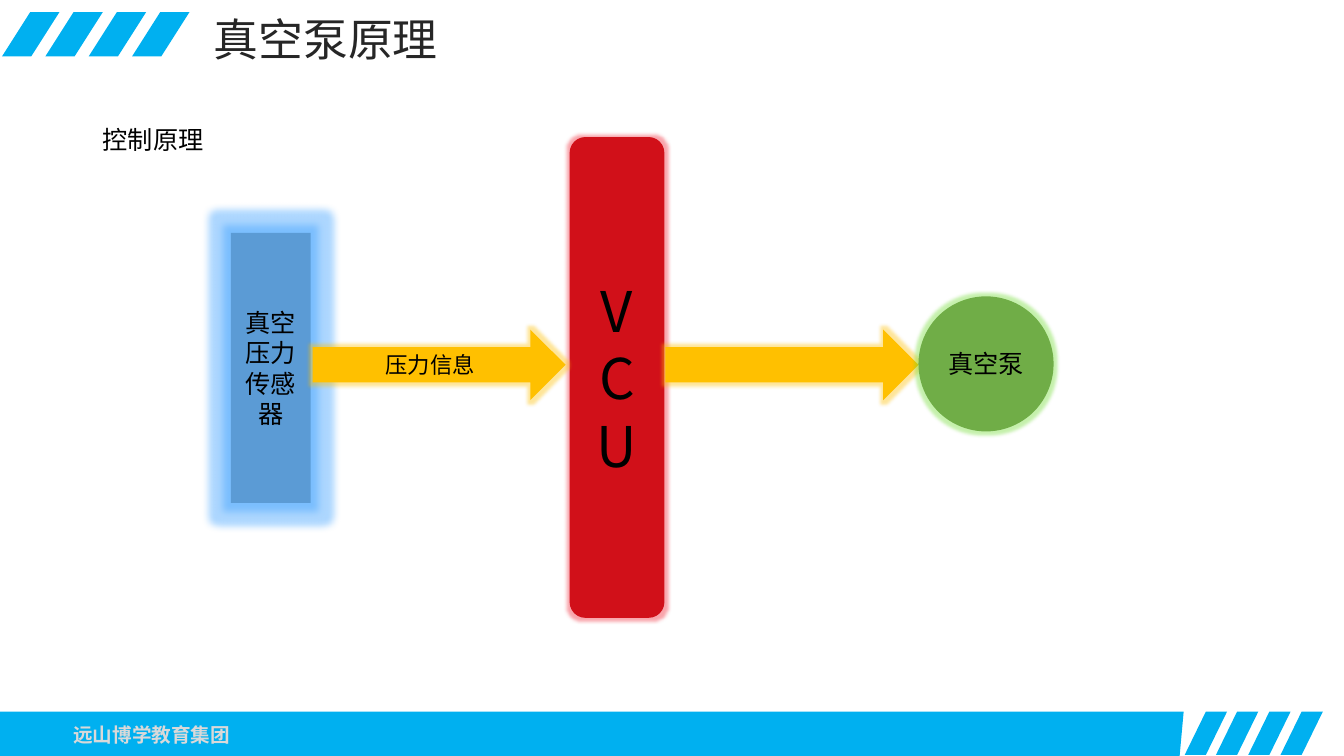
from dataclasses import dataclass

from lxml.etree import SubElement
from pptx import Presentation
from pptx.dml.color import RGBColor
from pptx.enum.shapes import MSO_SHAPE
from pptx.enum.text import MSO_ANCHOR, PP_ALIGN
from pptx.oxml.ns import qn
from pptx.shapes.autoshape import Shape
from pptx.slide import Slide
from pptx.text.text import TextFrame
from pptx.util import Pt

PX = 9144
FONT = "Noto Sans CJK SC"
SKY = RGBColor(0x00, 0xB0, 0xF0)
RED = RGBColor(0xD1, 0x10, 0x19)
BLUE = RGBColor(0x5B, 0x9B, 0xD5)
AMBER = RGBColor(0xFF, 0xC0, 0x00)
GREEN = RGBColor(0x70, 0xAD, 0x47)
BLACK = RGBColor(0x00, 0x00, 0x00)
CHARCOAL = RGBColor(0x26, 0x26, 0x26)
SILVER = RGBColor(0xD9, 0xD9, 0xD9)
RED_GLOW = RGBColor(0xF0, 0x20, 0x30)
BLUE_GLOW = RGBColor(0x31, 0x9B, 0xFF)
GREEN_GLOW = RGBColor(0x6F, 0xDC, 0x30)


@dataclass(frozen=True)
class Stripes:
    left: int
    top: int
    width: int
    height: int
    lean: int
    span: int


@dataclass(frozen=True)
class Label:
    text: str
    left: int
    top: int
    width: int
    height: int
    size: int
    color: RGBColor
    bold: bool = False
    align: PP_ALIGN = PP_ALIGN.LEFT
    anchor: MSO_ANCHOR = MSO_ANCHOR.TOP


@dataclass(frozen=True)
class Block:
    kind: MSO_SHAPE
    left: int
    top: int
    width: int
    height: int
    fill: RGBColor
    glow: RGBColor
    radius: int = 5
    text: str = ""
    size: int = 18
    wrap: bool = True


STRIPE_COUNT = 4
STRIPES = [
    Stripes(1175, 706, 21, 43, 21, 95),
    Stripes(2, 12, 29, 44, 28, 129),
]
FOOTER_BAR = [(0, 706), (1174, 706), (1170, 750), (0, 750)]
LABELS = [
    Label("远山博学教育集团", 56, 711, 189, 36, 14, SILVER, True,
          PP_ALIGN.CENTER, MSO_ANCHOR.MIDDLE),
    Label("真空泵原理", 202, 7, 632, 64, 32, CHARCOAL),
    Label("控制原理", 92, 118, 444, 40, 18, BLACK),
]
BLOCKS = [
    Block(MSO_SHAPE.ROUNDED_RECTANGLE, 565, 136, 94, 477, RED, RED_GLOW,
          text="V\nCU", size=40),
    Block(MSO_SHAPE.RECTANGLE, 229, 231, 79, 268, BLUE, BLUE_GLOW,
          radius=11, text="真空压力传感器"),
    Block(MSO_SHAPE.RIGHT_ARROW, 310, 327, 251, 70, AMBER, AMBER,
          text="压力信息", size=16),
    Block(MSO_SHAPE.RIGHT_ARROW, 660, 327, 251, 70, AMBER, AMBER),
    Block(MSO_SHAPE.OVAL, 911, 294, 134, 134, GREEN, GREEN_GLOW,
          text="真空泵", wrap=False),
]


def paint(shape: Shape, color: RGBColor) -> None:
    shape.shadow.inherit = False
    shape.fill.solid()
    shape.fill.fore_color.rgb = color
    shape.line.fill.background()


def add_glow(shape: Shape, color: RGBColor, radius: int) -> None:
    effects = shape._element.spPr.find(qn("a:effectLst"))
    glow = SubElement(effects, qn("a:glow"), rad=str(Pt(radius)))
    tint = SubElement(glow, qn("a:srgbClr"), val=str(color))
    SubElement(tint, qn("a:alpha"), val="40000")


def write(frame: TextFrame, text: str, size: int, color: RGBColor,
          align: PP_ALIGN, bold: bool = False) -> None:
    frame.text = text
    for para in frame.paragraphs:
        para.alignment = align
        para.font.size = Pt(size)
        para.font.bold = bold
        para.font.color.rgb = color
        para.font.name = FONT
        defaults = para._p.pPr.find(qn("a:defRPr"))
        SubElement(defaults, qn("a:ea"), typeface=FONT)


def add_outline(page: Slide, points: list[tuple[int, int]]) -> None:
    builder = page.shapes.build_freeform(*points[0], scale=PX)
    builder.add_line_segments(points[1:], close=True)
    paint(builder.convert_to_shape(), SKY)


def add_stripes(page: Slide, stripes: Stripes) -> None:
    bottom = stripes.top + stripes.height
    for index in range(STRIPE_COUNT):
        left = stripes.left + stripes.span * index // (STRIPE_COUNT - 1)
        right = left + stripes.width
        add_outline(page, [
            (left + stripes.lean, stripes.top),
            (left, bottom),
            (right, bottom),
            (right + stripes.lean, stripes.top),
        ])


def add_label(page: Slide, label: Label) -> None:
    box = page.shapes.add_textbox(label.left * PX, label.top * PX,
                                  label.width * PX, label.height * PX)
    frame = box.text_frame
    frame.word_wrap = True
    frame.vertical_anchor = label.anchor
    write(frame, label.text, label.size, label.color, label.align, label.bold)


def add_block(page: Slide, block: Block) -> None:
    shape = page.shapes.add_shape(block.kind, block.left * PX, block.top * PX,
                                  block.width * PX, block.height * PX)
    paint(shape, block.fill)
    add_glow(shape, block.glow, block.radius)
    if block.text:
        frame = shape.text_frame
        frame.word_wrap = block.wrap
        frame.vertical_anchor = MSO_ANCHOR.MIDDLE
        write(frame, block.text, block.size, BLACK, PP_ALIGN.CENTER)


def main() -> None:
    deck = Presentation()
    deck.slide_width = 1333 * PX
    deck.slide_height = 750 * PX
    page = deck.slides.add_slide(deck.slide_layouts[6])
    add_outline(page, FOOTER_BAR)
    for stripes in STRIPES:
        add_stripes(page, stripes)
    for label in LABELS:
        add_label(page, label)
    for block in BLOCKS:
        add_block(page, block)
    deck.save("out.pptx")


if __name__ == "__main__":
    main()
